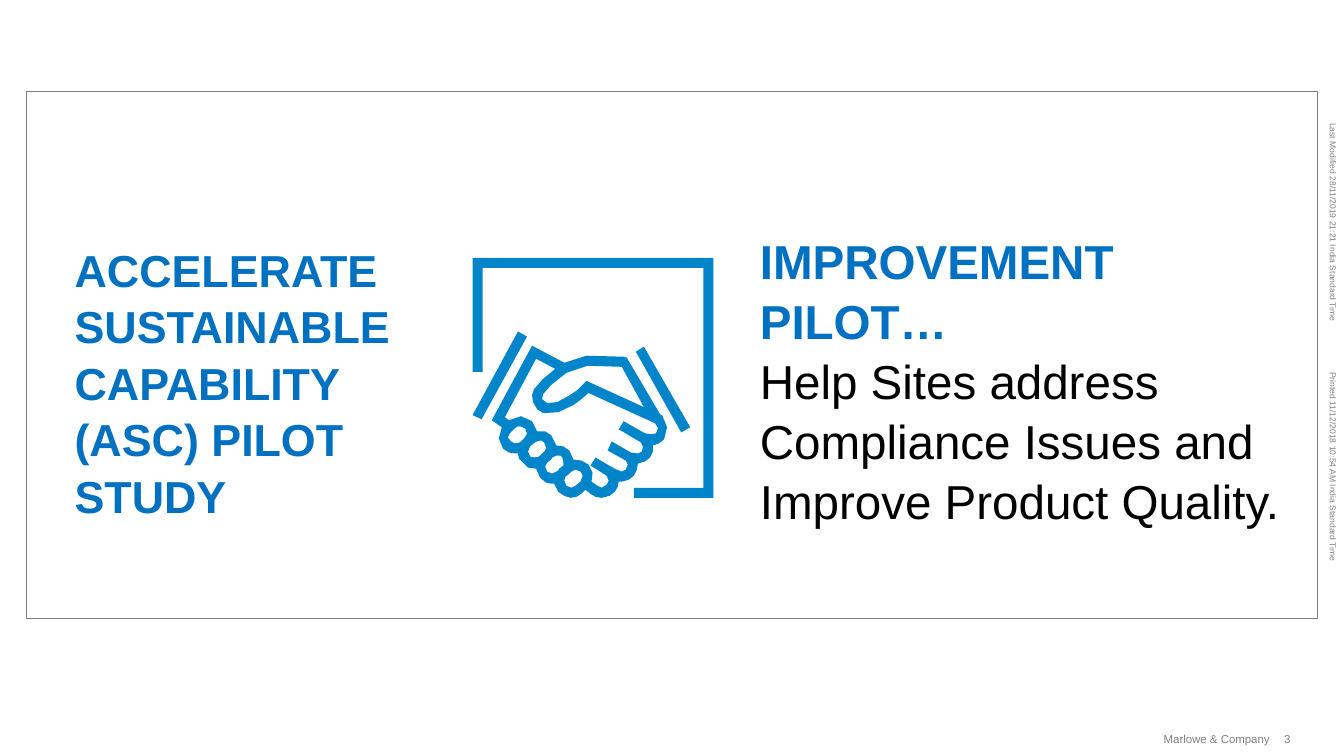
from pptx import Presentation
from pptx import util as u
from pptx.dml.color import RGBColor
from pptx.enum import shapes, text

BLUE, ICON_BLUE, GREY, BLACK = "0070C0", "0085CA", "808080", "000000"
ICON_UNITS = 239  # width of the grid on which the icon is drawn

FRAME = [(239, 238), (160, 238), (160, 228), (229, 228), (229, 10),
         (10, 10), (10, 113), (0, 113), (0, 0), (239, 0)]
LEFT_CUFF = [(9, 160), (0, 156), (45, 73), (54, 78)]
RIGHT_CUFF = [(207, 173), (162, 93), (170, 88), (216, 168)]
HANDS = [
    (188, 156), (186, 155), (153, 99), (150, 98), (113, 97), (91, 104),
    (59, 87), (19, 161), (29, 168), (26, 179), (30, 189), (36, 193),
    (42, 194), (45, 194), (46, 199), (50, 203), (55, 208), (62, 209),
    (63, 209), (67, 218), (73, 223), (79, 224), (81, 224), (85, 232),
    (91, 236), (97, 238), (103, 237), (109, 233), (112, 230), (117, 234),
    (122, 237), (128, 238), (136, 236), (141, 232), (144, 227), (145, 222),
    (148, 222), (155, 220), (160, 216), (163, 210), (164, 204), (171, 202),
    (176, 198), (179, 192), (179, 186), (185, 184), (190, 180), (193, 168)]
THUMB = [
    (93, 114), (114, 107), (148, 108), (170, 148), (113, 122), (110, 125),
    (104, 131), (95, 137), (84, 143), (74, 144), (69, 140), (70, 135),
    (78, 126)]
FINGERS = [
    [(47, 183), (42, 184), (38, 182), (35, 178), (37, 174), (42, 169),
     (45, 167), (47, 167), (52, 169), (54, 174), (52, 178)],
    [(66, 197), (61, 198), (57, 197), (55, 192), (57, 187), (62, 183),
     (64, 182), (68, 181), (71, 183), (73, 188), (72, 191), (68, 195)],
    [(85, 211), (83, 212), (79, 214), (74, 212), (72, 207), (74, 203),
     (78, 200), (79, 198), (83, 196), (87, 196), (89, 198), (90, 202),
     (90, 206), (86, 209)],
    [(102, 226), (98, 228), (93, 226), (91, 221), (92, 217), (95, 215),
     (98, 212), (102, 210), (107, 212), (109, 215), (109, 217), (107, 222)]]
PALM = [
    (182, 174), (177, 175), (171, 174), (150, 162), (145, 170), (167, 183),
    (169, 187), (168, 192), (164, 194), (157, 193), (138, 182), (134, 191),
    (152, 201), (154, 205), (152, 210), (148, 212), (143, 210), (139, 208),
    (122, 198), (117, 206), (133, 216), (135, 221), (133, 225), (128, 228),
    (124, 226), (118, 222), (119, 213), (115, 205), (108, 201), (100, 200),
    (96, 191), (90, 187), (83, 186), (78, 176), (72, 172), (64, 172),
    (59, 162), (48, 157), (36, 161), (32, 158), (63, 100), (82, 110),
    (70, 120), (61, 130), (59, 136), (60, 143), (64, 150), (70, 154),
    (85, 153), (100, 146), (108, 140), (115, 134), (181, 164), (184, 169)]
# Each shape is a list of outlines: the outer one, then its holes
ICON_SHAPES = [[FRAME], [HANDS, THUMB, *FINGERS, PALM], [LEFT_CUFF], [RIGHT_CUFF]]


def color(value):
    return RGBColor.from_string(value)


def add_text(page, place, lines, size, margins=(0, 0), wrap=True, spacing=None,
             align=text.PP_ALIGN.LEFT, anchor=text.MSO_ANCHOR.TOP):
    """Add a text box; lines holds (words, colour, bold) for each paragraph."""
    box = page.shapes.add_textbox(*map(u.Cm, place))
    frame = box.text_frame
    frame.word_wrap = wrap
    frame.vertical_anchor = anchor
    frame.margin_left = frame.margin_right = u.Cm(margins[0])
    frame.margin_top = frame.margin_bottom = u.Cm(margins[1])
    for index, (words, tint, bold) in enumerate(lines):
        para = frame.add_paragraph() if index else frame.paragraphs[0]
        para.text = words
        para.alignment = align
        para.line_spacing = spacing
        para.font.name = "Arial"
        para.font.size = u.Pt(size)
        para.font.bold = bold
        para.font.color.rgb = color(tint)
    return box


def add_icon(page, left, top, width):
    """Draw two shaking hands in an open square frame."""
    scale = ICON_UNITS / u.Cm(width)
    for outlines in ICON_SHAPES:
        builder = page.shapes.build_freeform(*outlines[0][0], scale=1 / scale)
        builder.add_line_segments(outlines[0][1:])
        for hole in outlines[1:]:
            builder.move_to(*hole[0])
            builder.add_line_segments(hole[1:])
        shape = builder.convert_to_shape(u.Cm(left), u.Cm(top))
        shape.shadow.inherit = False
        shape.fill.solid()
        shape.fill.fore_color.rgb = color(ICON_BLUE)
        shape.line.fill.background()


def add_panel(page, left, top, width, height):
    """Place the study name, the icon and the pilot's aim in an outlined panel."""
    panel = page.shapes.add_shape(shapes.MSO_SHAPE.RECTANGLE,
                                  *map(u.Cm, (left, top, width, height)))
    panel.shadow.inherit = False
    panel.fill.background()
    panel.line.color.rgb = color(GREY)
    panel.line.width = u.Pt(0.5)
    add_text(page, (left + 0.97, top + 3.74, 10.97, 6.83),
             [("ACCELERATE SUSTAINABLE CAPABILITY", BLUE, True),
              ("(ASC) PILOT STUDY", BLUE, True)],
             32, margins=(0.25, 0), spacing=1.05)
    add_icon(page, left + 11.25, top + 4.19, 6.07)
    add_text(page, (left + 18.24, top + 3.33, 14.27, 9.35),
             [("IMPROVEMENT PILOT…", BLUE, True),
              ("Help Sites address Compliance Issues and Improve Product Quality.",
               BLACK, False)],
             34, margins=(0.25, 0.13), spacing=1.05)


def add_footer(page, left, top, width, height):
    middle = text.MSO_ANCHOR.MIDDLE
    add_text(page, (left, top, width - 0.72, height),
             [("Marlowe & Company", GREY, False)], 8.2, wrap=False,
             align=text.PP_ALIGN.RIGHT, anchor=middle)
    add_text(page, (left + width - 0.36, top, 0.36, height),
             [("3", GREY, False)], 8.2, wrap=False, anchor=middle)


def add_side_stamps(page, center, top, height):
    """Run both date stamps down the right edge, one at each end of the span."""
    stamps = [("Last Modified 28/11/2019 21:21 India Standard Time", 5.08, top),
              ("Printed 11/12/2018 10:54 AM India Standard Time", 4.85,
               top + height - 4.85)]
    for words, length, start in stamps:
        place = (center - length / 2, start + length / 2 - 0.12, length, 0.25)
        stamp = add_text(page, place, [(words, GREY, False)], 6.1, wrap=False)
        stamp.rotation = 90


def main():
    deck = Presentation()
    deck.slide_width, deck.slide_height = u.Cm(33.87), u.Cm(19.05)
    page = deck.slides.add_slide(deck.slide_layouts[6])
    add_side_stamps(page, 33.6, 3.1, 11.12)
    add_footer(page, 29.13, 18.44, 3.59, 0.36)
    add_panel(page, 0.66, 2.31, 32.54, 13.28)
    deck.save("out.pptx")


if __name__ == "__main__":
    main()
